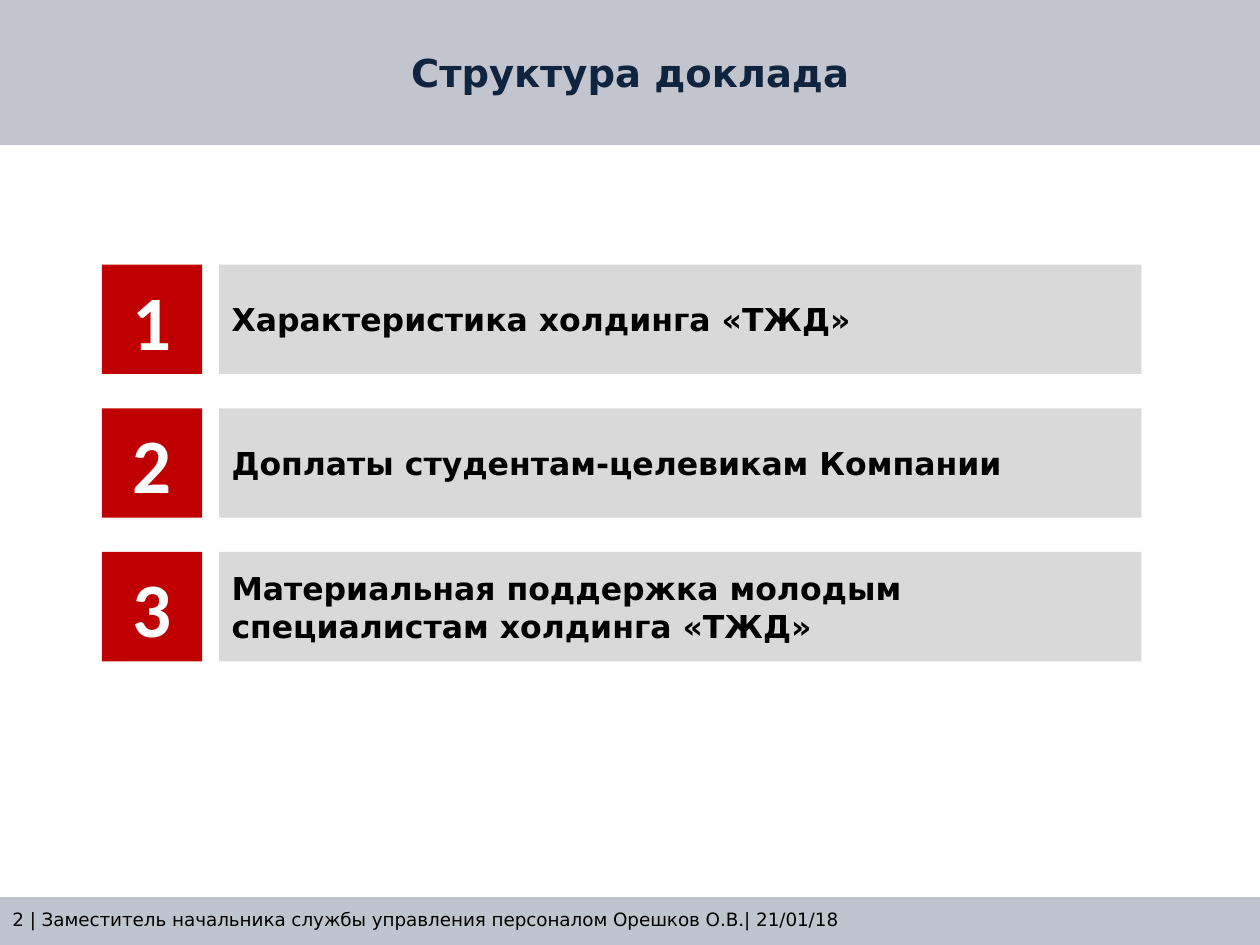
from pptx import Presentation
from pptx.dml.color import RGBColor
from pptx.enum.shapes import MSO_SHAPE
from pptx.enum.text import MSO_ANCHOR, PP_ALIGN
from pptx.util import Pt

FOOTER_GREY = RGBColor(0xBF, 0xC5, 0xCE)
HEADER_GREY = RGBColor(0xC3, 0xC5, 0xCE)
ITEM_GREY = RGBColor(0xD9, 0xD9, 0xD9)
RED = RGBColor(0xC0, 0x00, 0x00)
NAVY = RGBColor(0x0F, 0x24, 0x3E)
BLACK = RGBColor(0x00, 0x00, 0x00)
WHITE = RGBColor(0xFF, 0xFF, 0xFF)

ITEMS = [
    "Характеристика холдинга «ТЖД»",
    "Доплаты студентам-целевикам Компании",
    "Материальная поддержка молодым специалистам холдинга «ТЖД»",
]
ITEM_TOP, ITEM_STEP, ITEM_HEIGHT = 151.2, 82.1, 62.5


def set_text(shape, text, size=18, font="DejaVu Sans", color=BLACK, bold=True,
             align=PP_ALIGN.LEFT, anchor=MSO_ANCHOR.MIDDLE):
    tf = shape.text_frame
    tf.word_wrap = True
    tf.vertical_anchor = anchor
    p = tf.paragraphs[0]
    p.alignment = align
    r = p.add_run()
    r.text = text
    r.font.size = Pt(size)
    r.font.name = font
    r.font.bold = bold
    r.font.color.rgb = color


def add_box(slide, left, top, width, height, fill):
    s = slide.shapes.add_shape(MSO_SHAPE.RECTANGLE, Pt(left), Pt(top), Pt(width), Pt(height))
    s.shadow.inherit = False
    s.fill.solid()
    s.fill.fore_color.rgb = fill
    s.line.fill.background()
    return s


prs = Presentation()
prs.slide_width, prs.slide_height = Pt(720), Pt(540)
slide = prs.slides.add_slide(prs.slide_layouts[5])

# Title band
title = slide.shapes.title
title.left, title.top, title.width, title.height = Pt(0), Pt(0), Pt(720), Pt(82.8)
title.fill.solid()
title.fill.fore_color.rgb = HEADER_GREY
set_text(title, "Структура доклада", size=22, color=NAVY, align=PP_ALIGN.CENTER)

# Footer band
add_box(slide, 0, 512.6, 720, 27.4, FOOTER_GREY)
footer = slide.shapes.add_textbox(Pt(0), Pt(515.5), Pt(585.4), Pt(24.5))
set_text(footer, "2 | Заместитель начальника службы управления персоналом Орешков О.В.| 21/01/18",
         size=10.5, bold=False, anchor=MSO_ANCHOR.TOP)

# Numbered items
for i, item in enumerate(ITEMS):
    top = ITEM_TOP + i * ITEM_STEP
    number = add_box(slide, 58.2, top, 57.3, ITEM_HEIGHT, RED)
    set_text(number, str(i + 1), size=44, font="Calibri", color=WHITE, align=PP_ALIGN.CENTER)
    label = add_box(slide, 125.2, top, 527, ITEM_HEIGHT, ITEM_GREY)
    set_text(label, item)

prs.save("out.pptx")
